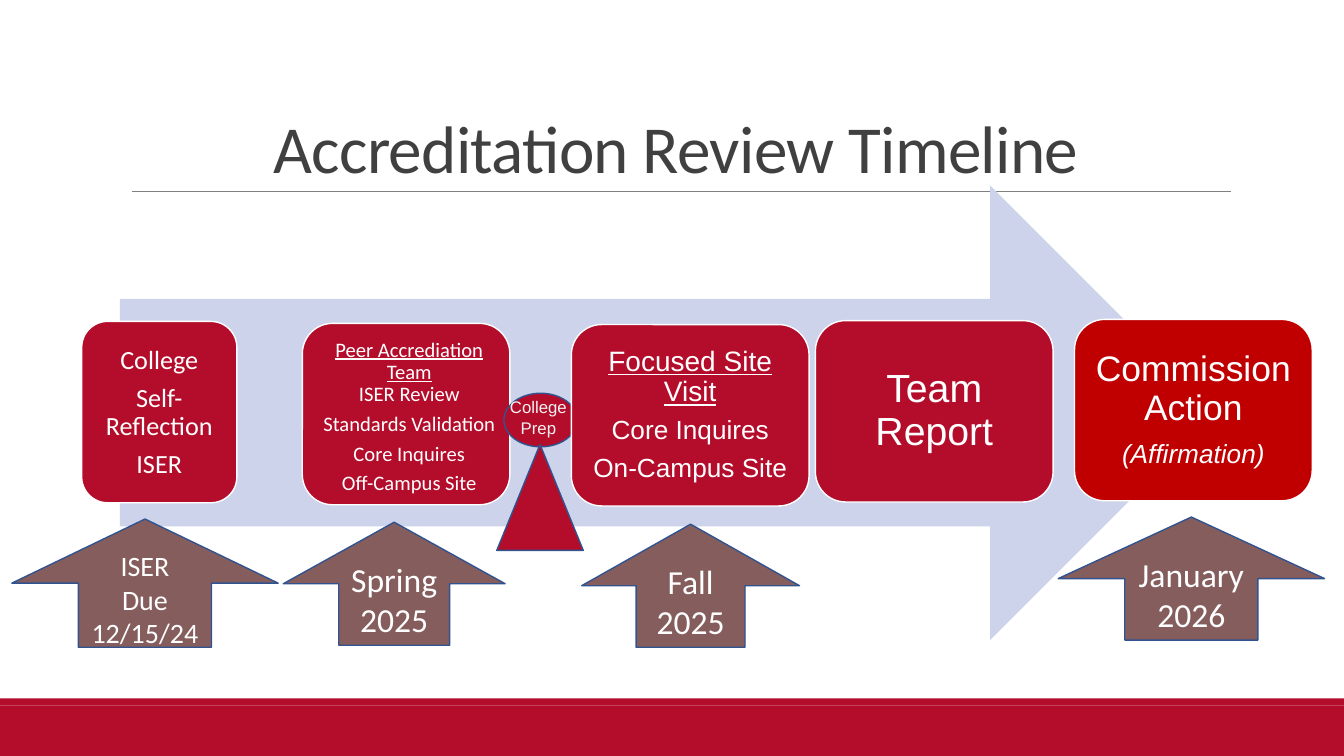
from lxml import etree
from pptx import Presentation
from pptx.dml.color import RGBColor
from pptx.enum.shapes import MSO_CONNECTOR, MSO_SHAPE
from pptx.enum.text import MSO_ANCHOR, MSO_AUTO_SIZE, PP_ALIGN
from pptx.oxml.ns import qn
from pptx.util import Cm, Pt

RECT, ROUND = MSO_SHAPE.RECTANGLE, MSO_SHAPE.ROUNDED_RECTANGLE
RIGHT, UP = MSO_SHAPE.RIGHT_ARROW, MSO_SHAPE.UP_ARROW
OVAL, CONE = MSO_SHAPE.OVAL, MSO_SHAPE.FLOWCHART_EXTRACT
MID, TOP = MSO_ANCHOR.MIDDLE, MSO_ANCHOR.TOP
CENTER, NO_FIT = PP_ALIGN.CENTER, MSO_AUTO_SIZE.NONE
STRAIGHT = MSO_CONNECTOR.STRAIGHT

RED, DEEP, BROWN, PALE = "B40D2B", "C00000", "855D5D", "CCD3EA"
NAVY, WHITE, GREY, DARK, LIGHT = "31538F", "FFFFFF", "808080", "404040", "F2F2F2"

# Content: lengths in cm, sizes in points
WIDE, HIGH = 33.87, 19.05
TITLE = "Accreditation Review Timeline"
BANDS = [(17.78, 1.27), (17.6, 0.18)]
UNDER, SLANT = {"underline": True}, {"italic": True}

# Each step: left, top, width, fill, padding, text shift, font, gap, lines
STEP_H = 4.57
STEPS = [
    (2.06, 8.1, 3.91, RED, 0.18, (0, 0.03), "Calibri", 6.7,
     [("College", 18.7, {}), ("Self-Reflection", 18.7, {}), ("ISER", 18.7, {})]),
    (7.62, 8.15, 5.23, RED, 0.15, (0.08, 0.08), "Calibri", 5.3,
     [("Peer Accrediation Team", 14.7, UNDER),
      ("ISER Review", 14.7, {"gap": 0}), ("Standards Validation", 14.7, {}),
      ("Core Inquires", 14.7, {}), ("Off-Campus Site", 14.7, {})]),
    (14.4, 8.18, 5.99, RED, 0.2, (0, 0), "Arial", 6.7,
     [("Focused Site Visit", 20, UNDER), ("Core Inquires", 18.7, {}),
      ("On-Campus Site", 18.7, {})]),
    (20.55, 8.08, 5.99, RED, 0.3, (0, 0), "Arial", 0, [("Team Report", 28, {})]),
    (27.08, 8.05, 5.99, DEEP, 0.25, (0, 0), "Arial", 9.3,
     [("Commission Action", 25.3, {}), ("(Affirmation)", 18.7, SLANT)]),
]
PREP = ["College", "Prep"]

# Each date: left, top, width, height, size, lines
DATES = [
    (0.3, 13.08, 6.71, 3.23, 20, ["ISER", "Due", "12/15/24"]),
    (7.14, 13.16, 5.59, 3.1, 24, ["Spring", "2025"]),
    (14.66, 13.21, 5.49, 3.1, 24, ["Fall", "2025"]),
    (26.67, 13.03, 6.71, 3.1, 24, ["January", "2026"]),
]


def paint(part, tone):
    """Colour a fill, or the fill of a line or font."""
    fill = part if hasattr(part, "solid") else part.fill
    fill.solid()
    fill.fore_color.rgb = RGBColor.from_string(tone)


def put(obj, values):
    for key, value in values.items():
        setattr(obj, key, value)


def draw(kind, box, tone, edge=None):
    shape = slide.shapes.add_shape(kind, *map(Cm, box))
    shape.shadow.inherit = False
    paint(shape.fill, tone)
    if edge:
        paint(shape.line, edge)
        shape.line.width = Pt(1)
    else:
        shape.line.fill.background()
    return shape


def write(shape, lines, font, tone, pads=(0.25, 0.13, 0.25, 0.13),
          anchor=MID, gap=0, lead=1.0):
    """Fill a shape with centred lines of (text, size, format)."""
    frame = shape.text_frame
    left, top, right, low = map(Cm, pads)
    put(frame, {"word_wrap": True, "auto_size": NO_FIT, "vertical_anchor": anchor,
                "margin_left": left, "margin_top": top,
                "margin_right": right, "margin_bottom": low})
    for i, (text, size, style) in enumerate(lines):
        para = frame.paragraphs[0] if i == 0 else frame.add_paragraph()
        look = dict(style)
        before = look.pop("gap", gap) if i else 0
        put(para, {"alignment": CENTER, "line_spacing": lead,
                   "space_before": Pt(before)})
        run = para.add_run()
        run.text = text
        put(run.font, {"name": font, "size": Pt(size), **look})
        paint(run.font, tone)


deck = Presentation()
put(deck, {"slide_width": Cm(WIDE), "slide_height": Cm(HIGH)})
slide = deck.slides.add_slide(deck.slide_layouts[5])

# Footer bands and title rule
for top, tall in BANDS:
    draw(RECT, (0, top, WIDE, tall), RED)
rule = slide.shapes.add_connector(STRAIGHT, Cm(3.33), Cm(4.83), Cm(31.01), Cm(4.83))
paint(rule.line, GREY)
rule.line.width = Pt(0.5)
etree.SubElement(rule.element.spPr, qn("a:effectLst"))

# Title
title = slide.shapes.title
put(title, {"left": Cm(3.38), "top": Cm(3.23), "width": Cm(27.31), "height": Cm(1.19)})
write(title, [(TITLE, 48, {})], "Calibri", DARK, lead=0.9)
title.text_frame.paragraphs[0].runs[0].font._element.set("spc", "-50")

# Broad arrow behind the steps
draw(RIGHT, (3.02, 4.67, 27.66, 11.46), PALE)


def add_step(left, top, width, tone, pad, shift, font, gap, lines):
    box = draw(ROUND, (left, top, width, STEP_H), tone, WHITE)
    dx, dy = shift
    pads = (pad + dx, pad + dy, pad - dx, pad - dy)
    write(box, lines, font, WHITE, pads, gap=gap, lead=0.9)


# First two steps, the prep marker, then the steps that overlap it
for step in STEPS[:2]:
    add_step(*step)
draw(OVAL, (12.7, 9.91, 1.85, 1.35), RED, NAVY)
label = slide.shapes.add_textbox(*map(Cm, (12.45, 9.88, 2.24, 1.27)))
write(label, [(text, 12, {}) for text in PREP], "Arial", LIGHT, anchor=TOP)
draw(CONE, (12.52, 11.2, 2.18, 2.67), RED, NAVY)
for step in STEPS[2:]:
    add_step(*step)

# Date arrows
for *box, size, lines in DATES:
    arrow = draw(UP, box, BROWN, NAVY)
    write(arrow, [(text, size, {}) for text in lines], "Calibri", WHITE)

deck.save("out.pptx")
